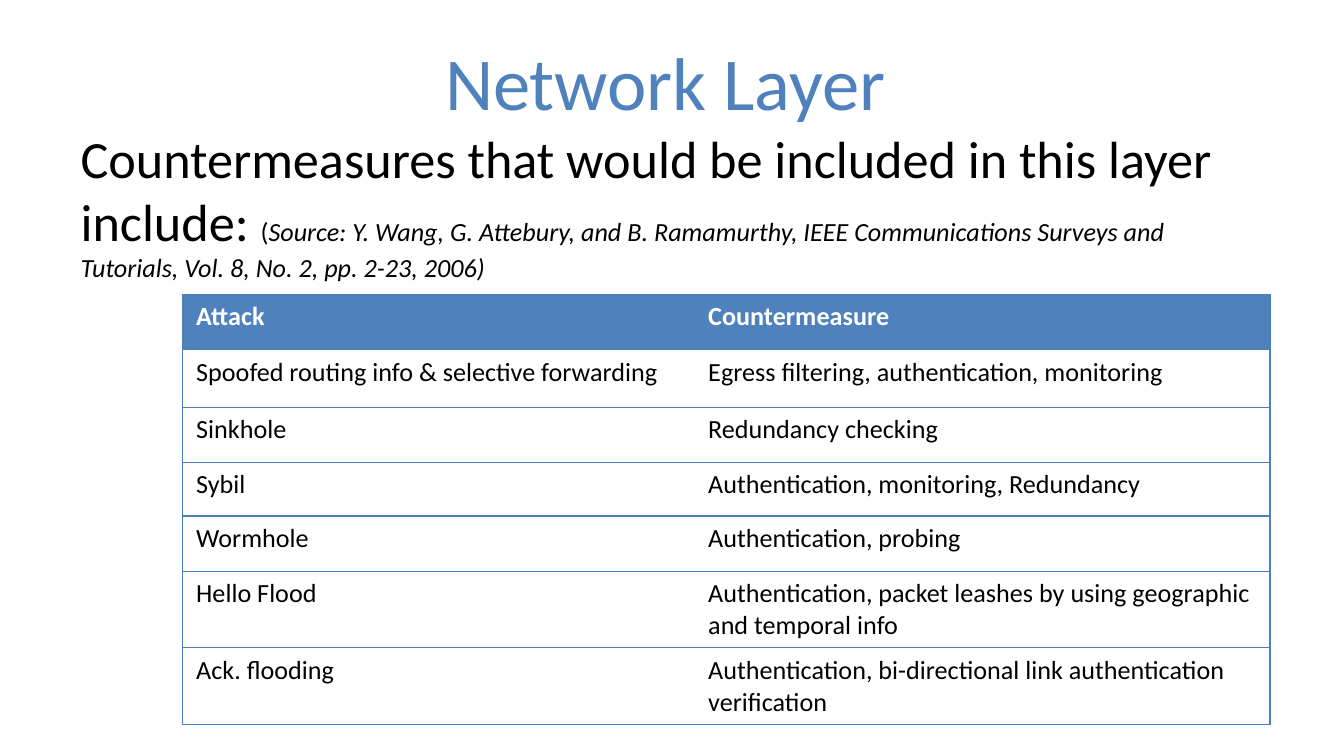
from dataclasses import dataclass

from lxml import etree
from pptx import Presentation
from pptx.dml.color import RGBColor
from pptx.enum.text import MSO_ANCHOR, PP_ALIGN
from pptx.oxml.ns import qn
from pptx.util import Inches, Pt

CENTER, LEFT = PP_ALIGN.CENTER, PP_ALIGN.LEFT
MIDDLE, TOP = MSO_ANCHOR.MIDDLE, MSO_ANCHOR.TOP
SLIDE_WIDTH = Inches(10)
SLIDE_HEIGHT = SLIDE_WIDTH * 9 // 16


@dataclass(frozen=True)
class Theme:
    font: str = "Calibri"
    accent: str = "4F81BD"
    border: str = "4B7EBC"
    ink: str = "000000"
    paper: str = "FFFFFF"
    title_size: int = 40
    lead_size: int = 28
    small_size: int = 14
    border_width: float = 0.75


THEME = Theme()

INSETS = {"margin_left": 0.09, "margin_top": 0.04, "margin_right": 0.09, "margin_bottom": 0.04}
LEAD = [
    ("Countermeasures that would be included in this layer include: ", THEME.lead_size, False),
    ("(", THEME.small_size, False),
    ("Source: Y. Wang, G. Attebury, and B. Ramamurthy, IEEE Communications "
     "Surveys and Tutorials, Vol. 8, No. 2, pp. 2-23, 2006)", THEME.small_size, True),
]
DEFENCES = [
    ("Attack", "Countermeasure"),
    ("Spoofed routing info & selective forwarding", "Egress filtering, authentication, monitoring"),
    ("Sinkhole", "Redundancy checking"),
    ("Sybil", "Authentication, monitoring, Redundancy"),
    ("Wormhole", "Authentication, probing"),
    ("Hello Flood", "Authentication, packet leashes by using geographic and temporal info"),
    ("Ack. flooding", "Authentication, bi-directional link authentication\nverification"),
]
COLUMN_WIDTHS = (3.81, 4.28)
ROW_HEIGHTS = (0.41, 0.43, 0.41, 0.4, 0.41, 0.57, 0.57)


def style_font(font, size, color, **flags):
    font.name, font.size = THEME.font, Pt(size)
    font.color.rgb = RGBColor.from_string(color)
    for flag, value in flags.items():
        setattr(font, flag, value)


def add_paragraph_box(slide, box, runs, color, align, anchor):
    """Place one paragraph made of (text, size, italic) runs."""
    frame = slide.shapes.add_textbox(*map(Inches, box)).text_frame
    frame.word_wrap = True
    frame.vertical_anchor = anchor
    for margin, inset in INSETS.items():
        setattr(frame, margin, Inches(inset))
    paragraph = frame.paragraphs[0]
    paragraph.alignment = align
    for text, size, italic in runs:
        run = paragraph.add_run()
        run.text = text
        style_font(run.font, size, color, italic=italic)


def set_borders(cell, drawn_sides):
    properties = cell._tc.get_or_add_tcPr()
    for side in "LRTB":
        line = etree.SubElement(properties, qn(f"a:ln{side}"), w=str(Pt(THEME.border_width)))
        if side in drawn_sides:
            fill = etree.SubElement(line, qn("a:solidFill"))
            etree.SubElement(fill, qn("a:srgbClr"), val=THEME.border)
        else:
            etree.SubElement(line, qn("a:noFill"))


def fill_cell(cell, text, is_header, outer_side):
    set_borders(cell, "TB" + outer_side)
    if is_header:
        cell.fill.solid()
        cell.fill.fore_color.rgb = RGBColor.from_string(THEME.accent)
    else:
        cell.fill.background()
    cell.text = text
    for paragraph in cell.text_frame.paragraphs:
        paragraph.alignment = LEFT
        for run in paragraph.runs:
            style_font(run.font, THEME.small_size,
                       THEME.paper if is_header else THEME.ink, bold=is_header)


def add_defence_table(slide, left, top):
    box = (left, top, sum(COLUMN_WIDTHS), sum(ROW_HEIGHTS))
    table = slide.shapes.add_table(
        len(DEFENCES), len(COLUMN_WIDTHS), *map(Inches, box)).table
    table.horz_banding = False
    for column, width in zip(table.columns, COLUMN_WIDTHS):
        column.width = Inches(width)
    for row, height, texts in zip(table.rows, ROW_HEIGHTS, DEFENCES):
        row.height = Inches(height)
        for cell, text, outer_side in zip(row.cells, texts, "LR"):
            fill_cell(cell, text, texts is DEFENCES[0], outer_side)


def main():
    deck = Presentation()
    deck.slide_width, deck.slide_height = SLIDE_WIDTH, SLIDE_HEIGHT
    slide = deck.slides.add_slide(deck.slide_layouts[6])
    add_paragraph_box(slide, (0.45, 0.13, 9, 0.94),
                      [("Network Layer", THEME.title_size, False)],
                      THEME.accent, CENTER, MIDDLE)
    add_paragraph_box(slide, (0.51, 0.9, 9, 3.71), LEAD, THEME.ink, LEFT, TOP)
    add_defence_table(slide, 1.36, 2.19)
    deck.save("out.pptx")


if __name__ == "__main__":
    main()
